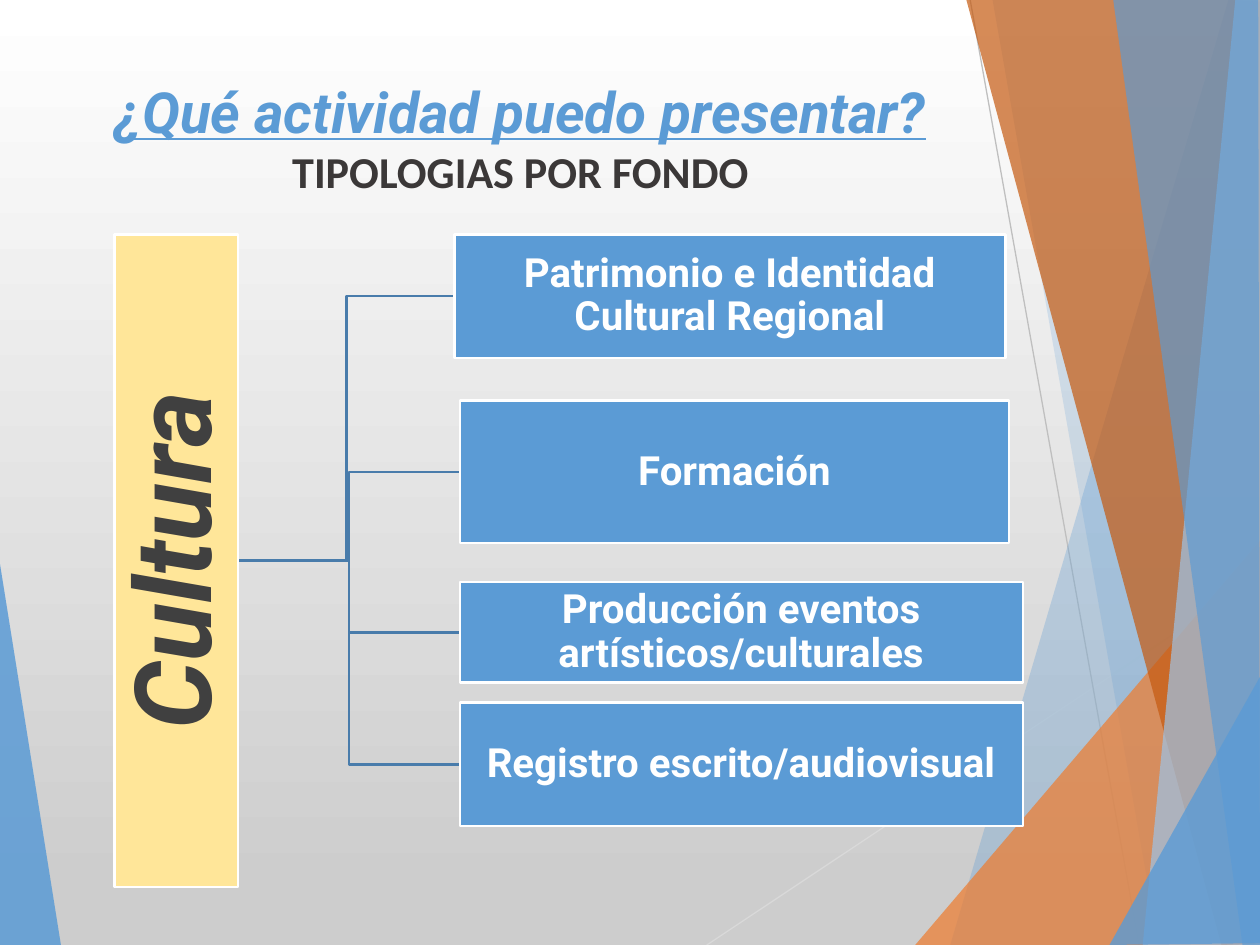
from lxml import etree
from pptx import Presentation
from pptx.dml.color import RGBColor
from pptx.enum import shapes, text
from pptx.oxml.ns import qn
from pptx.util import Pt

WHITE = RGBColor(0xFF, 0xFF, 0xFF)
SILVER = RGBColor(0xCD, 0xCD, 0xCD)
PALE_GRAY = RGBColor(0xD9, 0xD9, 0xD9)
MID_GRAY = RGBColor(0xBF, 0xBF, 0xBF)
BLUE = RGBColor(0x5B, 0x9B, 0xD5)
LIGHT_BLUE = RGBColor(0x9D, 0xC3, 0xE6)
LINK_BLUE = RGBColor(0x49, 0x7C, 0xAB)
ORANGE = RGBColor(0xED, 0x7D, 0x31)
DARK_ORANGE = RGBColor(0xC5, 0x5A, 0x11)
YELLOW = RGBColor(0xFF, 0xE6, 0x99)
CHARCOAL = RGBColor(0x40, 0x40, 0x40)
BROWN_GRAY = RGBColor(0x3B, 0x38, 0x38)

WIDTH, HEIGHT = 720, 540

# Colour, opacity in percent, corners
LEFT_FACET = (BLUE, 85, [(-0.7, 316), (35.3, 540.7), (-0.7, 540)])
RIGHT_FACETS = [
    (BLUE, 30, [(702, 0), (543, 540), (721, 540.7), (720.7, 0.7)]),
    (BLUE, 20, [(567.4, -0.7), (661.7, 540), (720.7, 540), (720.7, -0.7)]),
    (ORANGE, 72, [(522.7, 540), (720, 309), (720.7, 540)]),
    (DARK_ORANGE, 70, [(552.2, -0.7), (698.4, 540), (720.7, 539.3), (720.7, -0.7)]),
    (LIGHT_BLUE, 70, [(706.3, -0.7), (653, 540), (720.7, 540), (720, -0.7)]),
    (BLUE, 65, [(635.8, -0.7), (710, 540), (720, 540), (718.6, -0.7)]),
    (BLUE, 80, [(634.3, 540), (720.7, 385.2), (720.7, 539.3)]),
]
# Colour, start, end
RAYS = [
    (PALE_GRAY, (403.9, 540), (720.7, 329)),
    (MID_GRAY, (554.4, 0), (650.9, 540)),
]
TITLE = [
    ("¿Qué actividad puedo presentar?",
     dict(name="Roboto", size=Pt(32.4), bold=True, italic=True, underline=True), BLUE),
    ("TIPOLOGIAS POR FONDO", dict(name="Calibri", size=Pt(25.2), bold=True), BROWN_GRAY),
]
ROOT = ("Cultura", (-85.7, 285.1, 373, 70.6))
# Wording, (left, top, width, height)
BRANCHES = [
    ("Patrimonio e Identidad Cultural Regional", (259.9, 133.9, 314.6, 70.6)),
    ("Formación", (262.8, 229, 313.9, 81.4)),
    ("Producción eventos artísticos/culturales", (262.8, 332.6, 321.8, 57.6)),
    ("Registro escrito/audiovisual", (262.8, 401.4, 321.8, 70.6)),
]


def set_font(span, values, color):
    for name, value in values.items():
        setattr(span.font, name, value)
    span.font.color.rgb = color


def set_insets(frame, inset):
    for side in ("left", "top", "right", "bottom"):
        setattr(frame, f"margin_{side}", Pt(inset))


def add_facet(slide, color, opacity, corners):
    builder = slide.shapes.build_freeform(*corners[0], scale=Pt(1))
    builder.add_line_segments(corners[1:], close=True)
    facet = builder.convert_to_shape()
    facet.shadow.inherit = False
    facet.fill.solid()
    facet.fill.fore_color.rgb = color
    facet.line.fill.background()
    rgb = facet.fill._xPr.find(".//" + qn("a:srgbClr"))
    etree.SubElement(rgb, qn("a:alpha"), val=str(opacity * 1000))


def add_link(slide, kind, start, end, color, weight):
    link = slide.shapes.add_connector(kind, *(Pt(value) for value in start + end))
    link.line.color.rgb = color
    link.line.width = Pt(weight)
    etree.SubElement(link._element.spPr, qn("a:effectLst"))
    return link


def add_box(slide, words, place, fill, color, size, inset, italic=None):
    box = slide.shapes.add_shape(shapes.MSO_SHAPE.RECTANGLE, *map(Pt, place))
    box.shadow.inherit = False
    box.fill.solid()
    box.fill.fore_color.rgb = fill
    box.line.color.rgb = WHITE
    box.line.width = Pt(1.5)
    frame = box.text_frame
    frame.word_wrap = True
    frame.vertical_anchor = text.MSO_ANCHOR.MIDDLE
    set_insets(frame, inset)
    para = frame.paragraphs[0]
    para.alignment = text.PP_ALIGN.CENTER
    para.line_spacing = 0.9
    span = para.add_run()
    span.text = words
    set_font(span, dict(name="Roboto", size=Pt(size), bold=True, italic=italic), color)
    return box


def add_backdrop(slide):
    fill = slide.background.fill
    fill.gradient()
    fill.gradient_angle = 270
    for stop, color, position in zip(fill.gradient_stops, (WHITE, SILVER), (0, 0.94)):
        stop.color.rgb = color
        stop.position = position
    add_facet(slide, *LEFT_FACET)
    for color, start, end in RAYS:
        add_link(slide, shapes.MSO_CONNECTOR.STRAIGHT, start, end, color, 0.75)
    for facet in RIGHT_FACETS:
        add_facet(slide, *facet)


def add_title(slide):
    box = slide.shapes.add_textbox(Pt(31), Pt(37.4), Pt(532.8), Pt(103.7))
    frame = box.text_frame
    frame.word_wrap = True
    frame.margin_top = Pt(6.5)
    for index, (words, values, color) in enumerate(TITLE):
        para = frame.add_paragraph() if index else frame.paragraphs[0]
        para.alignment = text.PP_ALIGN.CENTER
        span = para.add_run()
        span.text = words
        set_font(span, values, color)


def add_tree(slide):
    words, place = ROOT
    left, top, width, height = place
    # After the quarter turn, the bottom side of the root faces right.
    start = (left + (width + height) / 2, top + height / 2)
    links = []
    for _, (x, y, _, h) in BRANCHES:
        links.append(add_link(slide, shapes.MSO_CONNECTOR.ELBOW, start, (x, y + h / 2),
                              LINK_BLUE, 1.5))
    root = add_box(slide, words, place, YELLOW, CHARCOAL, 61, 3, italic=True)
    root.rotation = 270
    for link, (label, spot) in zip(links, BRANCHES):
        branch = add_box(slide, label, spot, BLUE, WHITE, 23, 1.5)
        link.begin_connect(root, 2)
        link.begin_x, link.begin_y = map(Pt, start)
        link.end_connect(branch, 1)


def main():
    deck = Presentation()
    deck.slide_width, deck.slide_height = Pt(WIDTH), Pt(HEIGHT)
    slide = deck.slides.add_slide(deck.slide_layouts[6])
    add_backdrop(slide)
    add_title(slide)
    add_tree(slide)
    deck.save("out.pptx")


if __name__ == "__main__":
    main()
